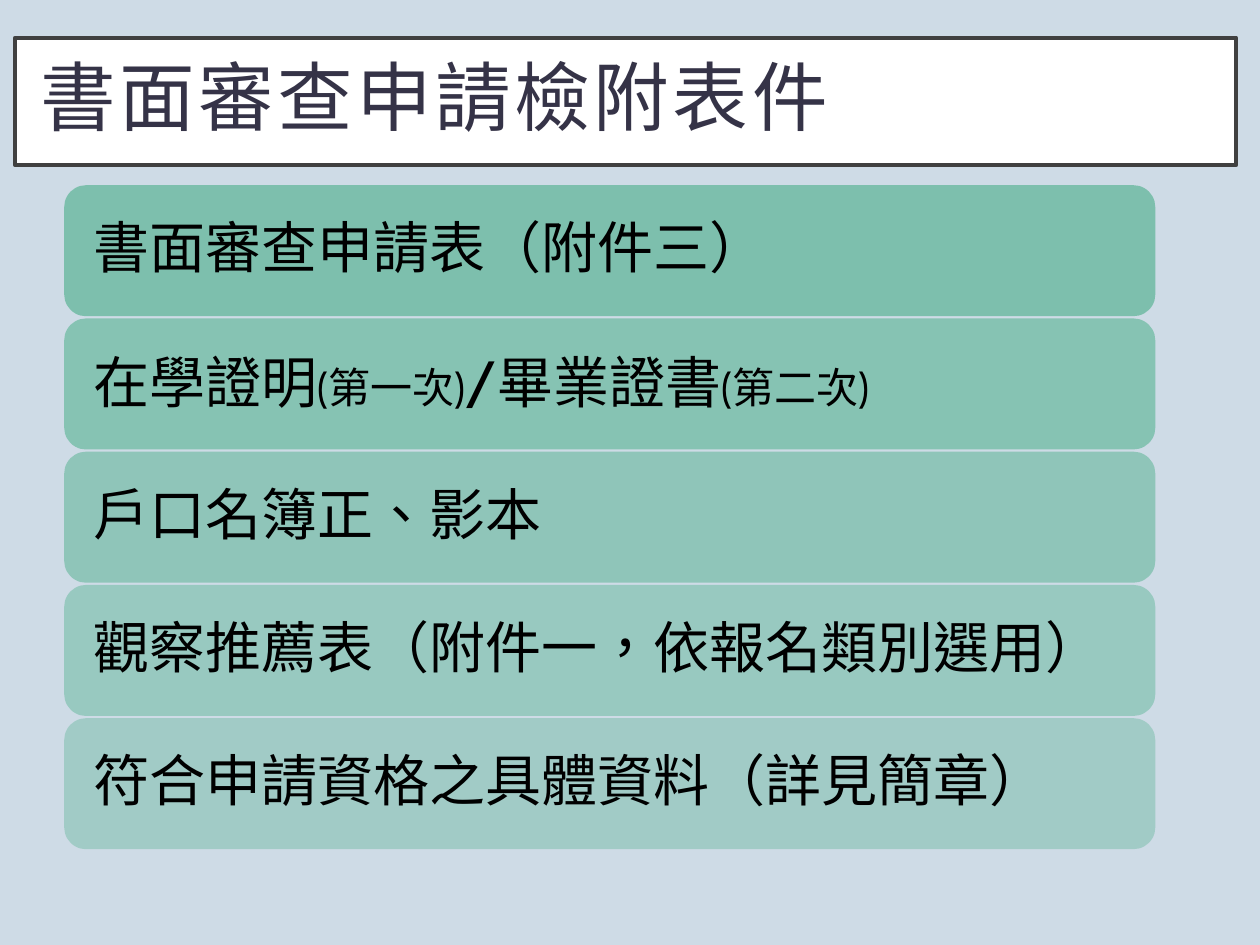
"""Build the slide listing the forms to attach to a written-review application."""
from dataclasses import dataclass

from lxml import etree
from pptx import Presentation, util as u
from pptx.dml.color import RGBColor
from pptx.enum import lang, shapes, text
from pptx.oxml.ns import qn


@dataclass(frozen=True)
class Theme:
    """Colours, fonts and type sizes of the slide."""
    background: str = "CEDBE6"
    panel: str = "FFFFFF"
    border: str = "404040"
    heading: str = "353347"
    bar: str = "75BDA7"
    ink: str = "000000"
    display_font: str = "Cabin"
    plain_font: str = "Arial"
    heading_size: float = 43.2
    item_size: float = 32
    slash_size: float = 34
    note_size: float = 24


@dataclass(frozen=True)
class Phrase:
    """A stretch of wording, with its own size where it differs."""
    wording: str
    size: float | None = None


@dataclass(frozen=True)
class Item:
    """One required document and the typeface of its line."""
    phrases: tuple[Phrase, ...]
    font: str


@dataclass(frozen=True)
class Box:
    """Position and size in inches."""
    left: float
    top: float
    width: float
    height: float


THEME = Theme()
HEADING_BOX = Box(0.12, 0.3, 9.69, 1.01)
FIRST_BAR = Box(0.51, 1.47, 8.66, 1.04)
LAST_BAR_TOP = 5.7
ITEMS = (
    Item((Phrase("書面審查申請表（附件三）"),), THEME.plain_font),
    Item((
        Phrase("在學證明"),
        Phrase("(第一次)", THEME.note_size),
        Phrase("/", THEME.slash_size),
        Phrase("畢業證書"),
        Phrase("(第二次)", THEME.note_size),
    ), THEME.display_font),
    Item((Phrase("戶口名簿正、影本"),), THEME.plain_font),
    Item((Phrase("觀察推薦表（附件一，依報名類別選用）"),), THEME.display_font),
    Item((Phrase("符合申請資格之具體資料（詳見簡章）"),), THEME.display_font),
)


def add_panel(slide, kind, box: Box, fill: str, inset: float):
    """Add a flat filled shape ready for left-aligned text."""
    panel = slide.shapes.add_shape(
        kind, u.Inches(box.left), u.Inches(box.top), u.Inches(box.width), u.Inches(box.height))
    panel.shadow.inherit = False
    panel.fill.solid()
    panel.fill.fore_color.rgb = RGBColor.from_string(fill)
    panel.line.fill.background()
    frame = panel.text_frame
    frame.word_wrap = True
    frame.vertical_anchor = text.MSO_ANCHOR.MIDDLE
    frame.margin_left = frame.margin_right = u.Inches(inset)
    frame.margin_top = frame.margin_bottom = u.Inches(inset)
    return panel


def write_line(panel, phrases: tuple[Phrase, ...], font: str, size: float, color: str):
    """Write the phrases as one paragraph and return it."""
    line = panel.text_frame.paragraphs[0]
    line.alignment = text.PP_ALIGN.LEFT
    line.line_spacing = 0.9
    line.font.name = font
    line.font.color.rgb = RGBColor.from_string(color)
    mixed = any(phrase.size for phrase in phrases)
    if not mixed:
        line.font.size = u.Pt(size)
    for phrase in phrases:
        run = line.add_run()
        run.text = phrase.wording
        run.font.language_id = lang.MSO_LANGUAGE_ID.TRADITIONAL_CHINESE
        if mixed:
            run.font.size = u.Pt(phrase.size or size)
    return line


def set_opacity(panel, percent: int) -> None:
    """Make the solid fill of a panel partly transparent."""
    color = panel.fill._xPr.find(qn("a:solidFill"))[0]
    etree.SubElement(color, qn("a:alpha")).set("val", str(percent * 1000))


def add_heading(slide, wording: str) -> None:
    """Add the framed heading with widened letter spacing."""
    panel = add_panel(slide, shapes.MSO_SHAPE.RECTANGLE, HEADING_BOX, THEME.panel, 0.2)
    panel.line.color.rgb = RGBColor.from_string(THEME.border)
    panel.line.width = u.Pt(2.5)
    line = write_line(
        panel, (Phrase(wording),), THEME.display_font, THEME.heading_size, THEME.heading)
    line.runs[0]._r.get_or_add_rPr().set("spc", "200")


def add_items(slide, items: tuple[Item, ...]) -> None:
    """Stack the items at an even pitch, each bar paler than the one above."""
    pitch = (LAST_BAR_TOP - FIRST_BAR.top) / (len(items) - 1)
    for row, item in enumerate(items):
        box = Box(FIRST_BAR.left, FIRST_BAR.top + row * pitch, FIRST_BAR.width, FIRST_BAR.height)
        bar = add_panel(slide, shapes.MSO_SHAPE.ROUNDED_RECTANGLE, box, THEME.bar, 0.18)
        set_opacity(bar, 90 - 10 * row)
        write_line(bar, item.phrases, item.font, THEME.item_size, THEME.ink)


def main() -> None:
    """Build and save the presentation."""
    deck = Presentation()
    deck.slide_width, deck.slide_height = u.Inches(10), u.Inches(7.5)
    slide = deck.slides.add_slide(deck.slide_layouts[6])
    slide.background.fill.solid()
    slide.background.fill.fore_color.rgb = RGBColor.from_string(THEME.background)
    add_heading(slide, "書面審查申請檢附表件")
    add_items(slide, ITEMS)
    deck.save("out.pptx")


if __name__ == "__main__":
    main()
